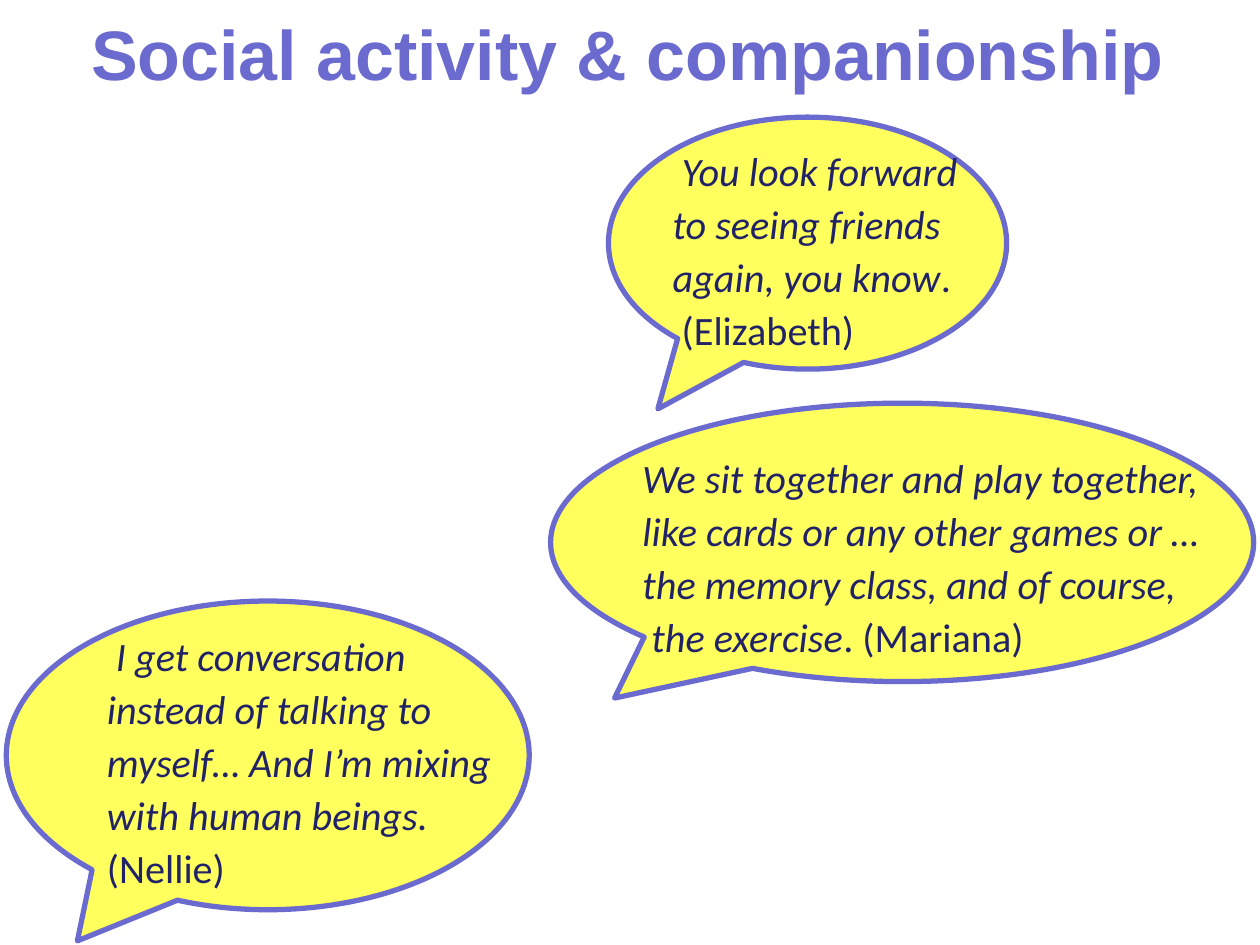
"""Build a slide of speech-bubble quotes about social activity and companionship."""
from typing import NamedTuple

from pptx import Presentation
from pptx.dml.color import RGBColor
from pptx.enum.shapes import MSO_SHAPE
from pptx.enum.text import MSO_ANCHOR, MSO_AUTO_SIZE, PP_ALIGN
from pptx.util import Inches, Pt

YELLOW = RGBColor(0xFF, 0xFF, 0x5D)
VIOLET = RGBColor(0x6B, 0x6B, 0xCF)
NAVY = RGBColor(0x22, 0x22, 0x67)


class Box(NamedTuple):
    left: float
    top: float
    width: float
    height: float

    def lengths(self) -> list:
        return [Inches(value) for value in self]


class Phrase(NamedTuple):
    text: str
    italic: bool


class Quote(NamedTuple):
    bubble: Box
    tail: tuple[float, float]
    text_box: Box
    right_margin: float
    anchor: MSO_ANCHOR
    space_after: int
    phrases: list[Phrase]


QUOTES = [
    Quote(Box(0.05, 4.77, 4.15, 2.45), (-0.364, 0.601),
          Box(0.75, 5.31, 4.02, 1.43), 0.72, MSO_ANCHOR.MIDDLE, 10,
          [Phrase(" I get conversation instead of talking to myself… "
                  "And I’m mixing with human beings. ", True),
           Phrase("(Nellie)", False)]),
    Quote(Box(4.83, 0.93, 3.16, 2), (-0.376, 0.658),
          Box(5.24, 1.07, 3.67, 1.8), 1.07, MSO_ANCHOR.TOP, 10,
          [Phrase(" You look forward \nto seeing friends again, you know", True),
           Phrase(".\n (Elizabeth)", False)]),
    Quote(Box(4.37, 3.2, 5.58, 2.21), (-0.409, 0.559),
          Box(5, 3.51, 5.61, 1.78), 0.86, MSO_ANCHOR.TOP, 4,
          [Phrase("We sit together and play together, \nlike cards or any other "
                  "games or … the memory class, and of course, \n the exercise", True),
           Phrase(". (Mariana)", False)]),
]


def add_title(slide, text: str) -> None:
    title = slide.shapes.title
    title.left, title.top, title.width, title.height = Box(-0.06, -0.03, 10.08, 0.89).lengths()
    frame = title.text_frame
    frame.auto_size = MSO_AUTO_SIZE.NONE
    frame.vertical_anchor = MSO_ANCHOR.MIDDLE
    paragraph = frame.paragraphs[0]
    paragraph.alignment = PP_ALIGN.CENTER
    run = paragraph.add_run()
    run.text = text
    run.font.name = "Arial"
    run.font.size = Pt(40)
    run.font.bold = True
    run.font.color.rgb = VIOLET


def add_bubble(slide, quote: Quote) -> None:
    bubble = slide.shapes.add_shape(MSO_SHAPE.OVAL_CALLOUT, *quote.bubble.lengths())
    bubble.shadow.inherit = False
    bubble.adjustments[0], bubble.adjustments[1] = quote.tail
    bubble.fill.solid()
    bubble.fill.fore_color.rgb = YELLOW
    bubble.line.color.rgb = VIOLET
    bubble.line.width = Pt(3)


def add_phrase(paragraph, phrase: Phrase) -> None:
    for index, line in enumerate(phrase.text.split("\n")):
        if index:
            paragraph.add_line_break()
        run = paragraph.add_run()
        run.text = line
        run.font.name = "Calibri"
        run.font.size = Pt(23)
        run.font.italic = phrase.italic
        run.font.color.rgb = NAVY


def add_quote_text(slide, quote: Quote) -> None:
    frame = slide.shapes.add_textbox(*quote.text_box.lengths()).text_frame
    frame.word_wrap = True
    frame.vertical_anchor = quote.anchor
    frame.margin_right = Inches(quote.right_margin)
    paragraph = frame.paragraphs[0]
    paragraph.line_spacing = 1.1
    paragraph.space_after = Pt(quote.space_after)
    for phrase in quote.phrases:
        add_phrase(paragraph, phrase)


def main() -> None:
    presentation = Presentation()
    presentation.slide_width = Inches(10)
    presentation.slide_height = Inches(7.5)
    slide = presentation.slides.add_slide(presentation.slide_layouts.get_by_name("Title Only"))
    add_title(slide, "Social activity & companionship")
    for quote in QUOTES:
        add_bubble(slide, quote)
    for quote in QUOTES:
        add_quote_text(slide, quote)
    presentation.save("out.pptx")


if __name__ == "__main__":
    main()
